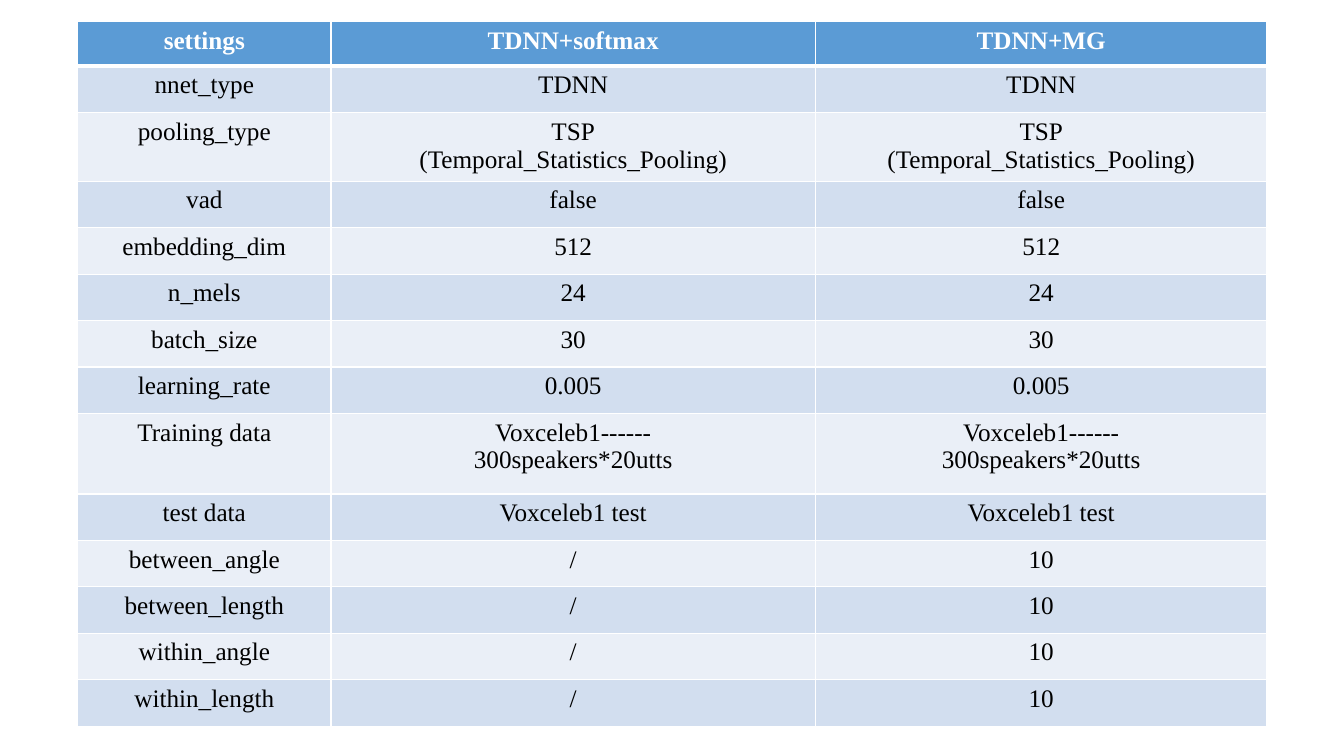
from lxml.etree import SubElement
from pptx import Presentation
from pptx.dml.color import RGBColor as Rgb
from pptx.enum.text import PP_ALIGN as Align
from pptx.oxml.ns import qn
from pptx.util import Cm, Pt

COLORS = {"header": "5B9BD5", "odd": "D2DEEF", "even": "EAEFF7",
          "light": "FFFFFF", "dark": "000000"}
FONT = "Times New Roman"
TABLE_BOX = (1.96, 0.55, 29.97, 17.81)
COLUMN_WIDTHS = (6.38, 12.21, 11.38)
HEADER_HEIGHT, ROW_HEIGHT = 1.12, 1.17
TALL_ROWS = {"pooling_type": 1.73, "Training data": 2.03}
POOLING = "TSP\n(Temporal_Statistics_Pooling)"
TRAINING = "Voxceleb1------\n300speakers*20utts"
SETTINGS = [
    ("settings", "TDNN+softmax", "TDNN+MG"),
    ("nnet_type", "TDNN", "TDNN"),
    ("pooling_type", POOLING, POOLING),
    ("vad", "false", "false"),
    ("embedding_dim", "512", "512"),
    ("n_mels", "24", "24"),
    ("batch_size", "30", "30"),
    ("learning_rate", "0.005", "0.005"),
    ("Training data", TRAINING, TRAINING),
    ("test data", "Voxceleb1 test", "Voxceleb1 test"),
    ("between_angle", "/", "10"),
    ("between_length", "/", "10"),
    ("within_angle", "/", "10"),
    ("within_length", "/", "10"),
]


def add_borders(cell, top, bottom):
    """Draw white borders with the given top and bottom widths in points."""
    properties = cell._tc.get_or_add_tcPr()
    for side, width in (("L", 1), ("R", 1), ("T", top), ("B", bottom)):
        line = SubElement(properties, qn(f"a:ln{side}"), w=str(Pt(width)))
        fill = SubElement(line, qn("a:solidFill"))
        SubElement(fill, qn("a:srgbClr"), val=COLORS["light"])


def write_cell(cell, text, is_header):
    """Write centred lines of text, one paragraph each."""
    for index, line in enumerate(text.split("\n")):
        frame = cell.text_frame
        para = frame.add_paragraph() if index else frame.paragraphs[0]
        para.alignment = Align.CENTER
        span = para.add_run()
        span.text = line
        span.font.name = FONT
        span.font.size = Pt(18)
        span.font.bold = is_header
        span.font.color.rgb = Rgb.from_string(COLORS["light" if is_header else "dark"])


def add_settings_table(page, box):
    """Place the banded settings table in the box."""
    table = page.shapes.add_table(len(SETTINGS), len(COLUMN_WIDTHS), *map(Cm, box)).table
    for column, width in zip(table.columns, COLUMN_WIDTHS):
        column.width = Cm(width)
    for index, (row, texts) in enumerate(zip(table.rows, SETTINGS)):
        is_header = index == 0
        row.height = Cm(HEADER_HEIGHT if is_header else TALL_ROWS.get(texts[0], ROW_HEIGHT))
        band = "header" if is_header else "odd" if index % 2 else "even"
        for cell, text in zip(row.cells, texts):
            add_borders(cell, 3 if index == 1 else 1, 3 if is_header else 1)
            cell.fill.solid()
            cell.fill.fore_color.rgb = Rgb.from_string(COLORS[band])
            write_cell(cell, text, is_header)


def main():
    """Build and save the deck."""
    deck = Presentation()
    deck.slide_width, deck.slide_height = Cm(33.87), Cm(19.05)
    page = deck.slides.add_slide(deck.slide_layouts[6])
    add_settings_table(page, TABLE_BOX)
    deck.save("out.pptx")


if __name__ == "__main__":
    main()
